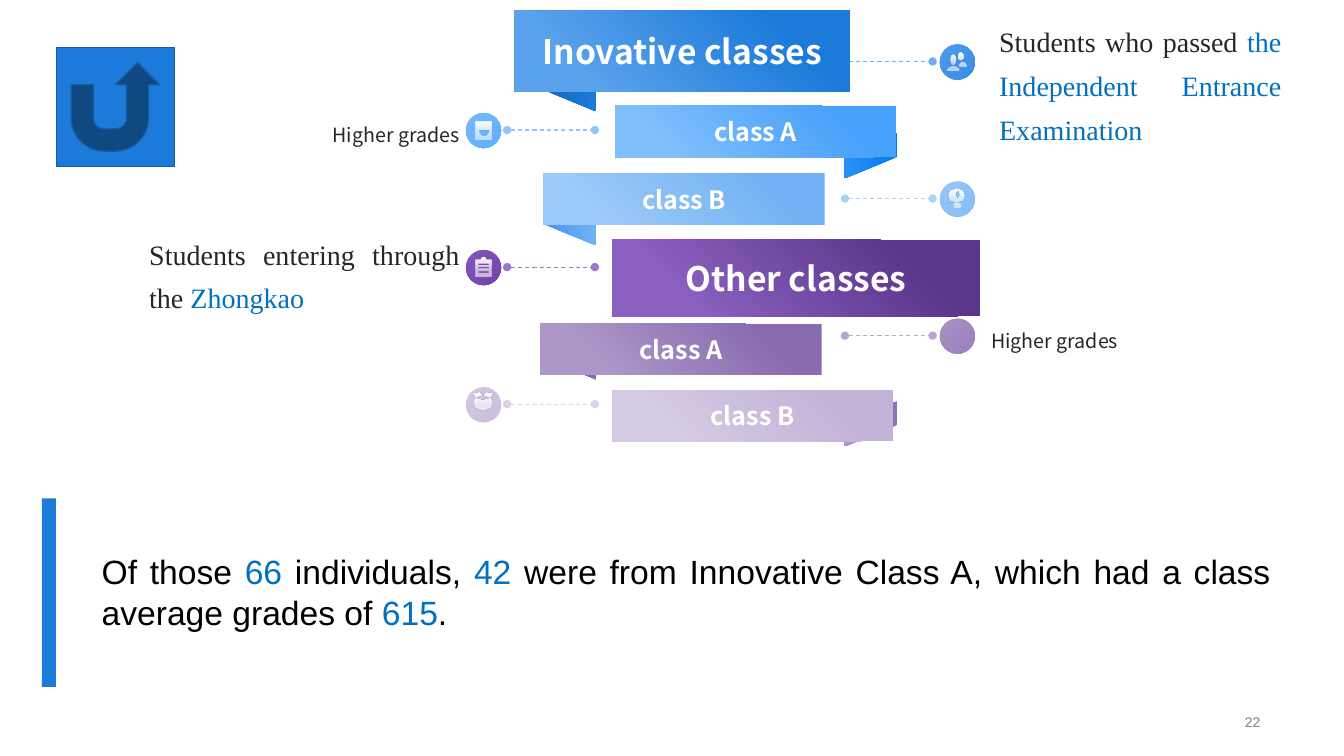
from dataclasses import dataclass
from lxml.etree import SubElement
from math import cos, pi, sin
from pptx import Presentation
from pptx.dml.color import RGBColor
from pptx.enum.dml import MSO_LINE
from pptx.enum.shapes import MSO_CONNECTOR, MSO_SHAPE
from pptx.enum.text import MSO_ANCHOR, PP_ALIGN
from pptx.oxml.ns import qn
from pptx.util import Inches, Pt

HUES = {
    "white": "FFFFFF", "black": "000000", "ink": "262626", "gray": "808080",
    "blue": "1B7ADA", "edge": "145BA3", "key": "0070C0",
    "top fold": "1768B9", "top fold end": "1B7ADA", "top link": "72AFED",
    "top dot": "4E9BE9", "top dot end": "378EE6",
    "top bar": "1B7ADA", "top bar end": "5AA2EB",
    "sky fold": "0679EB", "sky fold end": "2991F9", "sky link": "91C7FC",
    "sky dot": "76B8FB", "sky dot end": "63AFFB",
    "sky bar": "48A1FA", "sky bar end": "7FBDFB",
    "ice fold": "4097F0", "ice fold end": "72B2F4", "ice link": "AAD1F8",
    "ice dot": "95C5F7", "ice dot end": "87BEF6",
    "ice bar": "72B2F4", "ice bar end": "9CC9F7",
    "plum fold": "442968", "plum fold end": "52317C", "plum link": "9A77C9",
    "plum dot": "8155BB", "plum dot end": "7145AC",
    "plum bar": "5B378A", "plum bar end": "8A60C0",
    "mauve fold": "74549D", "mauve fold end": "896BB0", "mauve link": "B8A6D0",
    "mauve dot": "A790C4", "mauve dot end": "9B81BC",
    "mauve bar": "896BB0", "mauve bar end": "AC97C8",
    "pale fold": "8F72B7", "pale fold end": "AE99CB", "pale link": "DBD1E8",
    "pale dot": "D2C6E2", "pale dot end": "CCBEDE",
    "pale bar": "C3B3D8", "pale bar end": "D5CAE4",
}
SANS, SERIF = "Noto Sans CJK SC", "Times New Roman"


@dataclass
class Row:
    tint: str
    label: str
    left: float
    top: float
    width: float = 2.79
    height: float = 0.51
    size: int = 18


@dataclass
class Icon:
    left: float
    top: float
    loops: list


@dataclass
class Note:
    text: str
    box: tuple
    font: str = SANS
    size: int = 14
    align: PP_ALIGN = PP_ALIGN.JUSTIFY


def block(x: float, y: float, w: float, h: float) -> list:
    return [(x, y), (x + w, y), (x + w, y + h), (x, y + h)]


def ring(x: float, y: float, w: float, h: float, count: int = 16, turn: int = 2) -> list:
    steps = [pi + turn * pi * step / count for step in range(count + 1)]
    return [(x + w * cos(step), y + h * sin(step)) for step in steps]


def mirror(half: list, axis: float) -> list:
    return half + [(2 * axis - x, y) for x, y in reversed(half)]


ROWS = [
    Row("top", "Inovative classes", 5.1, 0.1, 3.33, 0.81, 24),
    Row("sky", "class A", 6.1, 1.05),
    Row("ice", "class B", 5.39, 1.72),
    Row("plum", "Other classes", 6.07, 2.38, 3.65, 0.76, 24),
    Row("mauve", "class A", 5.36, 3.21),
    Row("pale", "class B", 6.07, 3.87),
]
NOTES = [
    Note("Students who passed |the Independent Entrance Examination",
         (9.91, 0.2, 2.8, 1.19), SERIF, 20),
    Note("Higher grades", (9.83, 2.94, 2.13, 0.81)),
    Note("Students entering through the |Zhongkao", (1.48, 2.28, 3.08, 0.81), SERIF, 20),
    Note("Higher grades", (2.43, 0.9, 2.13, 0.81), align=PP_ALIGN.RIGHT),
]
ICONS = [
    Icon(4.72, 1.21, [block(0, 0, 15, 17), ring(8, 8, 4, -5, turn=1)]),
    Icon(4.72, 2.56, [block(0, 2, 15, 16), ring(7.5, 2, 3, 2, turn=1),
                      *(block(3, y, 9, 1) for y in (6, 9, 13))]),
    Icon(4.69, 3.9, [mirror([(10, 3), (7, 0), (1, 1), (3, 5), (1, 9), (3, 14), (10, 17)], 10),
                     ring(10, 5, 7, 2, 4)]),
    Icon(9.4, 0.52, [ring(6, 7, 3, 5), ring(6, 18, 6, 5, turn=1),
                     ring(13, 4, 3, 4), ring(15, 14, 4, 5, turn=1)]),
    Icon(9.41, 1.87, [ring(8, 7, 8, 7), block(5, 14, 7, 5), ring(9, 6, 2, 4, 4)]),
]

deck = Presentation()
deck.slide_width, deck.slide_height = Inches(13.33), Inches(7.5)
slide = deck.slides.add_slide(deck.slide_layouts[6])
shapes = slide.shapes


def tone(name: str) -> RGBColor:
    return RGBColor.from_string(HUES[name])


def blend(shape, start: str, end: str, stops: tuple = (0, 1), angle: int = 90) -> None:
    shape.fill.gradient()
    shape.fill.gradient_angle = 360 - angle
    for stop, name, spot in zip(shape.fill.gradient_stops, (start, end), stops):
        stop.color.rgb = tone(name)
        stop.position = spot


def clear(shape) -> None:
    shape.shadow.inherit = False
    shape.line.fill.background()


def form(kind: MSO_SHAPE, *box: float):
    shape = shapes.add_shape(kind, *map(Inches, box))
    clear(shape)
    return shape


def write(frame, text: str, *, font: str, size: int, color: str = "ink", bold: bool = False,
          align: PP_ALIGN = PP_ALIGN.JUSTIFY, anchor: MSO_ANCHOR = MSO_ANCHOR.MIDDLE,
          space: float = 1.0, inset: bool = True) -> None:
    frame.word_wrap = True
    frame.vertical_anchor = anchor
    if not inset:
        frame.margin_left = frame.margin_right = frame.margin_top = frame.margin_bottom = 0
    line = frame.paragraphs[0]
    line.alignment, line.line_spacing = align, space
    for spot, part in enumerate(text.split("|")):
        run = line.add_run()
        run.text = part
        run.font.name, run.font.size, run.font.bold = font, Pt(size), bold
        run.font.color.rgb = tone("key" if spot % 2 else color)


def label(*box: float):
    return shapes.add_textbox(*map(Inches, box)).text_frame


def fold(row: Row, rank: int) -> None:
    right = rank % 2 == 1
    shape = form(MSO_SHAPE.PARALLELOGRAM, 8.41 if right else 5.43, 0.62 + rank * 1.33 / 2,
                 0.45, 0.52)
    shape.adjustments[0] = 0.47
    shape.rotation = 270
    if right:
        shape.element.spPr.get_or_add_xfrm().set("flipV", "1")
    blend(shape, f"{row.tint} fold", f"{row.tint} fold end")


def link(row: Row, rank: int) -> None:
    start, spot = (5.03, 4.62) if rank % 2 else (8.38, 9.32)
    level = 0.61 + rank * 1.36 / 2
    wire = shapes.add_connector(MSO_CONNECTOR.STRAIGHT, Inches(start), Inches(level),
                                Inches(start + 0.87), Inches(level))
    wire.line.color.rgb = tone(f"{row.tint} link")
    wire.line.width = Pt(0.75)
    wire.line.dash_style = MSO_LINE.DASH
    for tip in ("a:headEnd", "a:tailEnd"):
        SubElement(wire.element.spPr.find(qn("a:ln")), qn(tip), type="oval")
    SubElement(wire.element.spPr, qn("a:effectLst"))
    dot = form(MSO_SHAPE.OVAL, spot, level - 0.17, 0.35, 0.35)
    blend(dot, f"{row.tint} dot", f"{row.tint} dot end", angle=44)


def bar(row: Row) -> None:
    shape = form(MSO_SHAPE.RECTANGLE, row.left, row.top, row.width, row.height)
    blend(shape, f"{row.tint} bar", f"{row.tint} bar end", (0.2, 0.8), 135)
    write(shape.text_frame, row.label, font=SANS, size=row.size, color="white", bold=True,
          align=PP_ALIGN.CENTER)


def draw(icon: Icon) -> None:
    first, *rest = icon.loops
    pen = shapes.build_freeform(*first[0], scale=Inches(0.01))
    pen.add_line_segments(first[1:])
    for loop in rest:
        pen.move_to(*loop[0])
        pen.add_line_segments(loop[1:])
    shape = pen.convert_to_shape(Inches(icon.left), Inches(icon.top))
    clear(shape)
    blend(shape, "white", "white", (0, 0.65))
    last = list(shape.element.spPr.iter(qn("a:srgbClr")))[-1]
    SubElement(last, qn("a:alpha"), val="60000")


write(label(9.69, 7.04, 2.91, 0.24), "22", font="Arial", size=10, color="gray",
      align=PP_ALIGN.RIGHT)
strip = form(MSO_SHAPE.RECTANGLE, -0.45, 5.81, 1.87, 0.14)
strip.rotation = 90
back = form(MSO_SHAPE.ACTION_BUTTON_RETURN, 0.56, 0.47, 1.17, 1.18)
for shape in (strip, back):
    shape.fill.solid()
    shape.fill.fore_color.rgb = tone("blue")
back.line.color.rgb = tone("edge")
back.line.width = Pt(1)

for rank, row in enumerate(ROWS):
    fold(row, rank)
for rank, row in enumerate(ROWS):
    link(row, rank)
for row in ROWS:
    bar(row)
for note in NOTES:
    write(label(*note.box), note.text, font=note.font, size=note.size, align=note.align,
          space=1.3, inset=False)
for icon in ICONS:
    draw(icon)
write(label(0.91, 5.42, 11.79, 0.84),
      "Of those |66| individuals, |42| were from Innovative Class A, "
      "which had a class average grades of |615|.",
      font="Arial", size=24, color="black", anchor=MSO_ANCHOR.TOP)

deck.save("out.pptx")
